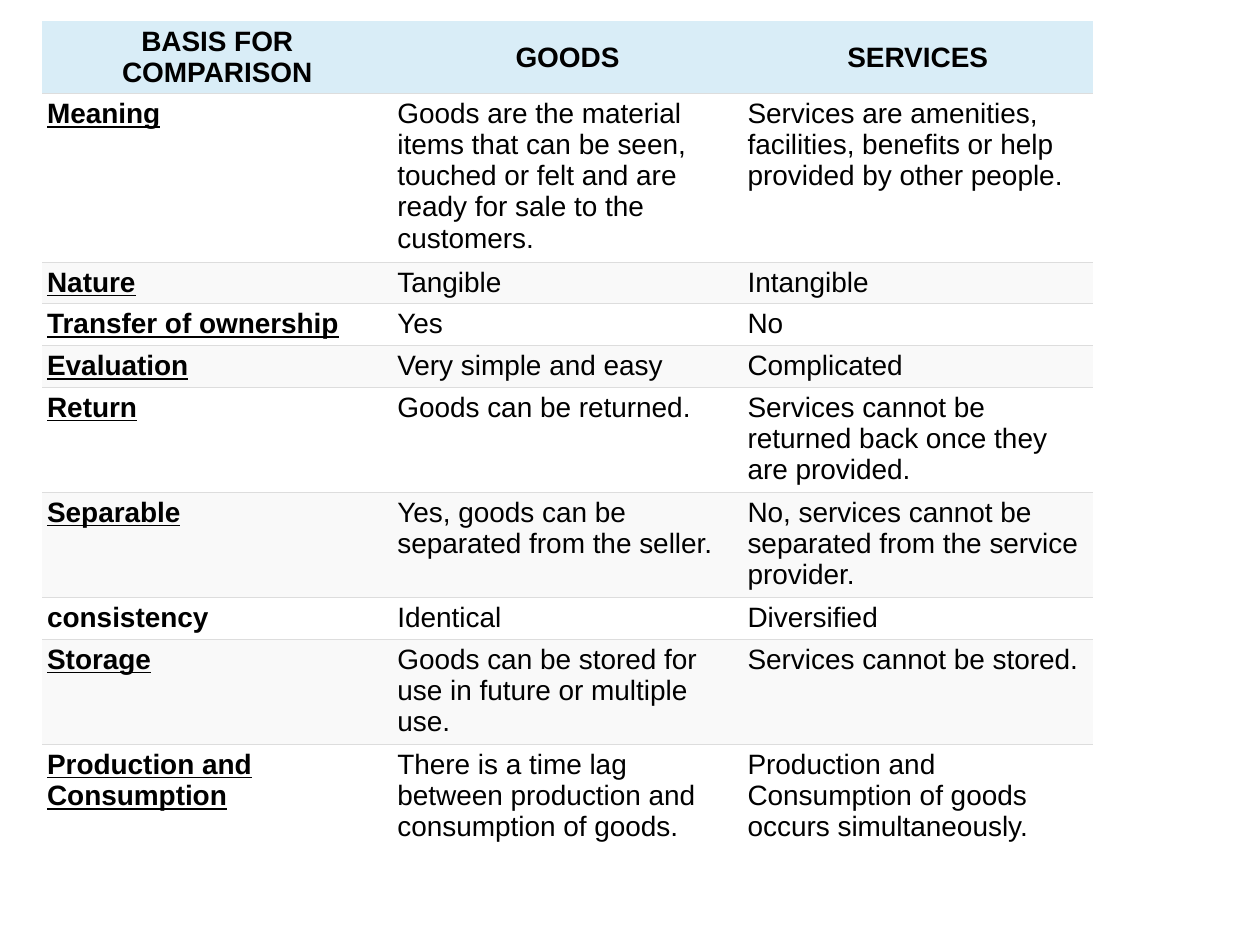
import pptx
import pptx.dml.color
import pptx.enum.text
import pptx.oxml
import pptx.oxml.ns
import pptx.util
from pptx.util import Cm

HEADINGS = ("BASIS FOR COMPARISON", "GOODS", "SERVICES")
# basis, goods, services, lines of text in the tallest cell
COMPARISONS = [
    ("Meaning",
     "Goods are the material items that can be seen, touched or felt and are ready for sale to the customers.",
     "Services are amenities, facilities, benefits or help provided by other people.", 5),
    ("Nature", "Tangible", "Intangible", 1),
    ("Transfer of ownership", "Yes", "No", 1),
    ("Evaluation", "Very simple and easy", "Complicated", 1),
    ("Return", "Goods can be returned.",
     "Services cannot be returned back once they are provided.", 3),
    ("Separable", "Yes, goods can be separated from the seller.",
     "No, services cannot be separated from the service provider.", 3),
    ("consistency ", "Identical", "Diversified", 1),
    ("Storage", "Goods can be stored for use in future or multiple use.",
     "Services cannot be stored.", 3),
    ("Production and Consumption",
     "There is a time lag between production and consumption of goods.",
     "Production and Consumption of goods occurs simultaneously.", 3),
]
NOT_UNDERLINED = "consistency"

HEADING_FILL = "D9EDF7"
STRIPES = ("FFFFFF", "F9F9F9")
RULE = "DDDDDD"
COLUMN_WIDTH = Cm(7.06)
HEADING_HEIGHT = Cm(1.07)
ONE_LINE_HEIGHT = Cm(0.84)
LINE_STEP = Cm(0.64)


def color(hex_string):
    return pptx.dml.color.RGBColor.from_string(hex_string)


def write(cell, text, bold=False, underline=False, align=None, anchor=None):
    cell.margin_left = cell.margin_right = cell.margin_top = cell.margin_bottom = Cm(0.1)
    cell.vertical_anchor = anchor
    paragraph = cell.text_frame.paragraphs[0]
    paragraph.alignment = align
    run = paragraph.add_run()
    run.text = text
    run.font.name = "Arial"
    run.font.size = pptx.util.Pt(16)
    run.font.bold = bold
    run.font.underline = underline
    run.font.color.rgb = color("000000")


def paint(cell, fill, ruled_sides):
    """Fill the cell and rule only the given sides (T, B)."""
    cell.fill.solid()
    cell.fill.fore_color.rgb = color(fill)
    properties = cell._tc.get_or_add_tcPr()
    for index, side in enumerate("LRTB"):
        if side in ruled_sides:
            stroke = f'<a:solidFill><a:srgbClr val="{RULE}"/></a:solidFill>'
        else:
            stroke = "<a:noFill/>"
        properties.insert(index, pptx.oxml.parse_xml(
            f'<a:ln{side} {pptx.oxml.ns.nsdecls("a")} w="{pptx.util.Pt(0.75)}">{stroke}</a:ln{side}>'))


def main():
    presentation = pptx.Presentation()
    presentation.slide_width, presentation.slide_height = Cm(25.4), Cm(19.05)
    slide = presentation.slides.add_slide(presentation.slide_layouts[6])

    heights = [HEADING_HEIGHT] + [
        ONE_LINE_HEIGHT + LINE_STEP * (lines - 1) for *_, lines in COMPARISONS]
    comparison = slide.shapes.add_table(
        len(heights), len(HEADINGS), Cm(0.85), Cm(0.43),
        COLUMN_WIDTH * len(HEADINGS), sum(heights)).table
    for column in comparison.columns:
        column.width = COLUMN_WIDTH
    for row, height in zip(comparison.rows, heights):
        row.height = height

    for column, heading in enumerate(HEADINGS):
        cell = comparison.cell(0, column)
        write(cell, heading, bold=True, align=pptx.enum.text.PP_ALIGN.CENTER,
              anchor=pptx.enum.text.MSO_ANCHOR.MIDDLE)
        paint(cell, HEADING_FILL, "B")

    for row, (*texts, _) in enumerate(COMPARISONS, start=1):
        ruled_sides = "T" if row == len(COMPARISONS) else "TB"
        for column, text in enumerate(texts):
            cell = comparison.cell(row, column)
            is_basis = column == 0
            write(cell, text, bold=is_basis,
                  underline=is_basis and text.strip() != NOT_UNDERLINED)
            paint(cell, STRIPES[(row - 1) % 2], ruled_sides)

    presentation.save("out.pptx")


if __name__ == "__main__":
    main()
